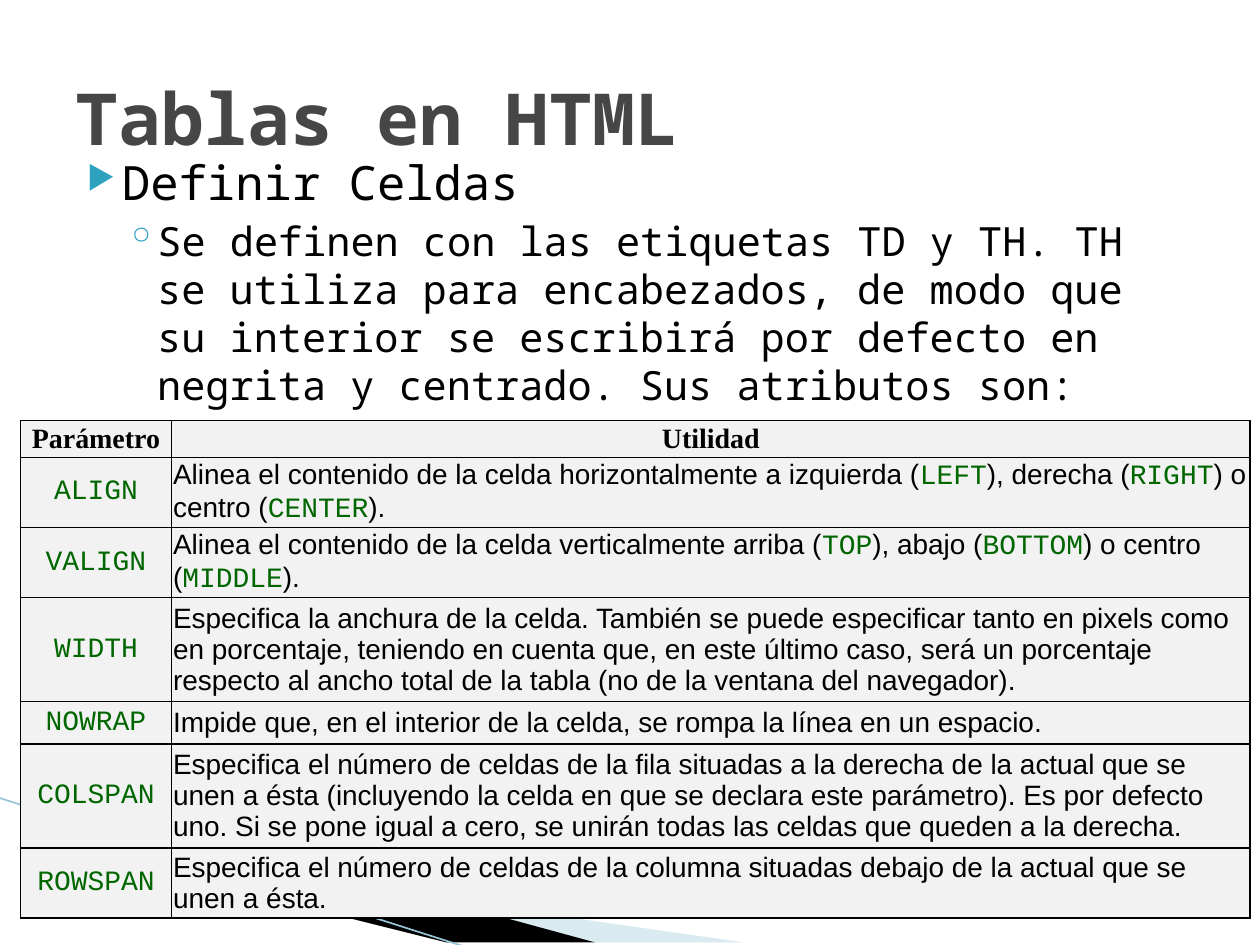
from dataclasses import dataclass

from lxml.etree import SubElement
from pptx import Presentation
from pptx.dml.color import RGBColor
from pptx.enum.shapes import MSO_CONNECTOR
from pptx.enum.text import MSO_ANCHOR, MSO_AUTO_SIZE, PP_ALIGN
from pptx.oxml import parse_xml
from pptx.oxml.ns import nsdecls, qn
from pptx.util import Cm, Pt

BLACK, GREEN, TEAL = "000000", "006600", "2DA2BF"
HEADING_FONT, CODE_FONT, TEXT_FONT = "Noto Sans Mono", "Courier New", "Arial"


@dataclass
class Wedge:
    points: list[tuple[float, float]]
    color: str
    opacity: int


@dataclass
class Bullet:
    text: str
    size: float
    symbol: str
    symbol_percent: int
    margin: float
    indent: float
    level: int
    space_before: float


@dataclass
class Attribute:
    name: str
    use: str
    height: float


WEDGES = [
    Wedge([(1.4, 16.54), (15.11, 19.08), (11.58, 19.08), (1.4, 16.51)], "A0CBDC", 40),
    Wedge([(1.35, 16.48), (11.61, 19.08), (9.45, 19.1), (1.37, 16.51)], BLACK, 100),
]

BULLETS = [
    Bullet("Definir Celdas", 27, "▶", 68, 1.02, -0.71, 0, 0),
    Bullet("Se definen con las etiquetas TD y TH. TH se utiliza para encabezados, "
           "de modo que su interior se escribirá por defecto en negrita y centrado. "
           "Sus atributos son:", 23, "◦", 100, 1.73, -0.64, 1, 3.2),
]

ATTRIBUTES = [
    Attribute("ALIGN", "Alinea el contenido de la celda horizontalmente a izquierda "
              "(|LEFT|), derecha (|RIGHT|) o centro (|CENTER|).", 1.3),
    Attribute("VALIGN", "Alinea el contenido de la celda verticalmente arriba "
              "(|TOP|), abajo (|BOTTOM|) o centro (|MIDDLE|).", 1.28),
    Attribute("WIDTH", "Especifica la anchura de la celda. También se puede especificar "
              "tanto en pixels como en porcentaje, teniendo en cuenta que, en este último "
              "caso, será un porcentaje respecto al ancho total de la tabla (no de la "
              "ventana del navegador).", 1.88),
    Attribute("NOWRAP", "Impide que, en el interior de la celda, se rompa la línea "
              "en un espacio.", 0.86),
    Attribute("COLSPAN", "Especifica el número de celdas de la fila situadas a la derecha "
              "de la actual que se unen a ésta (incluyendo la celda en que se declara este "
              "parámetro). Es por defecto uno. Si se pone igual a cero, se unirán todas las "
              "celdas que queden a la derecha.", 1.88),
    Attribute("ROWSPAN", "Especifica el número de celdas de la columna situadas debajo de "
              "la actual que se unen a ésta.", 1.3),
]


def rgb(color: str) -> RGBColor:
    return RGBColor.from_string(color)


def format_run(run, size: float, font: str, color: str, bold: bool = False) -> None:
    run.font.size = Pt(size)
    run.font.name = font
    run.font.bold = bold
    run.font.color.rgb = rgb(color)


def draw_wedge(slide, wedge: Wedge) -> None:
    builder = slide.shapes.build_freeform(*wedge.points[0], scale=Cm(1))
    builder.add_line_segments(wedge.points[1:], close=True)
    shape = builder.convert_to_shape()
    shape.shadow.inherit = False
    shape.line.fill.background()
    shape.fill.solid()
    shape.fill.fore_color.rgb = rgb(wedge.color)
    if wedge.opacity < 100:
        tint = shape._element.spPr.find(qn("a:solidFill"))[0]
        SubElement(tint, qn("a:alpha"), val=str(wedge.opacity * 1000))


def draw_edge(slide) -> None:
    edge = slide.shapes.add_connector(
        MSO_CONNECTOR.STRAIGHT, Cm(-0.03), Cm(16.08), Cm(9.42), Cm(19.1))
    edge.line.color.rgb = rgb("97C5D8")
    edge.line.width = Pt(0.95)
    SubElement(edge._element.spPr, qn("a:effectLst"))


def write_title(slide) -> None:
    title = slide.shapes.title
    title.left, title.top, title.width, title.height = Cm(1.27), Cm(0.76), Cm(22.86), Cm(3.18)
    frame = title.text_frame
    frame.text = "Tablas en HTML"
    frame.auto_size = MSO_AUTO_SIZE.NONE
    frame.vertical_anchor = MSO_ANCHOR.MIDDLE
    frame.paragraphs[0].alignment = PP_ALIGN.LEFT
    format_run(frame.paragraphs[0].runs[0], 41, HEADING_FONT, "464646", True)


def write_bullet(paragraph, bullet: Bullet) -> None:
    paragraph.text = bullet.text
    paragraph.level = bullet.level
    paragraph.space_before = Pt(bullet.space_before)
    properties = paragraph._p.get_or_add_pPr()
    properties.set("marL", str(Cm(bullet.margin)))
    properties.set("indent", str(Cm(bullet.indent)))
    SubElement(SubElement(properties, qn("a:buClr")), qn("a:srgbClr"), val=TEAL)
    SubElement(properties, qn("a:buSzPct"), val=str(bullet.symbol_percent * 1000))
    SubElement(properties, qn("a:buChar"), char=bullet.symbol)
    format_run(paragraph.runs[0], bullet.size, HEADING_FONT, BLACK)


def write_body(slide) -> None:
    frame = slide.shapes.add_textbox(Cm(1.19), Cm(2.97), Cm(22.86), Cm(12.57)).text_frame
    frame.word_wrap = True
    for position, bullet in enumerate(BULLETS):
        write_bullet(frame.add_paragraph() if position else frame.paragraphs[0], bullet)


def prepare_cell(cell, centered: bool):
    cell.fill.solid()
    cell.fill.fore_color.rgb = rgb("F2F2F2")
    cell.vertical_anchor = MSO_ANCHOR.MIDDLE
    cell.margin_left = cell.margin_right = cell.margin_top = cell.margin_bottom = Cm(0.03)
    properties = cell._tc.get_or_add_tcPr()
    for position, side in enumerate("LRTB"):
        properties.insert(position, parse_xml(
            f'<a:ln{side} {nsdecls("a")} w="{Pt(1)}"><a:solidFill>'
            f'<a:srgbClr val="{BLACK}"/></a:solidFill></a:ln{side}>'))
    paragraph = cell.text_frame.paragraphs[0]
    paragraph.alignment = PP_ALIGN.CENTER if centered else PP_ALIGN.LEFT
    return paragraph


def write_label(cell, label: str, font: str, color: str, bold: bool) -> None:
    paragraph = prepare_cell(cell, True)
    paragraph.text = label
    format_run(paragraph.runs[0], 16, font, color, bold)


def write_use(cell, use: str) -> None:
    paragraph = prepare_cell(cell, False)
    for position, part in enumerate(use.split("|")):
        run = paragraph.add_run()
        run.text = part
        is_code = position % 2 == 1
        format_run(run, 16, CODE_FONT if is_code else TEXT_FONT, GREEN if is_code else BLACK)


def draw_table(slide) -> None:
    table = slide.shapes.add_table(
        len(ATTRIBUTES) + 1, 2, Cm(0.41), Cm(8.48), Cm(24.79), Cm(9.16)).table
    table.columns[0].width, table.columns[1].width = Cm(3.05), Cm(21.74)
    table.rows[0].height = Cm(0.66)
    for column, heading in enumerate(["Parámetro", "Utilidad"]):
        write_label(table.cell(0, column), heading, "Times New Roman", BLACK, True)
    for row, attribute in enumerate(ATTRIBUTES, start=1):
        table.rows[row].height = Cm(attribute.height)
        write_label(table.cell(row, 0), attribute.name, CODE_FONT, GREEN, False)
        write_use(table.cell(row, 1), attribute.use)


def main() -> None:
    presentation = Presentation()
    presentation.slide_width, presentation.slide_height = Cm(25.4), Cm(19.05)
    slide = presentation.slides.add_slide(presentation.slide_layouts[5])
    for wedge in WEDGES:
        draw_wedge(slide, wedge)
    draw_edge(slide)
    write_body(slide)
    write_title(slide)
    draw_table(slide)
    presentation.save("out.pptx")


if __name__ == "__main__":
    main()
